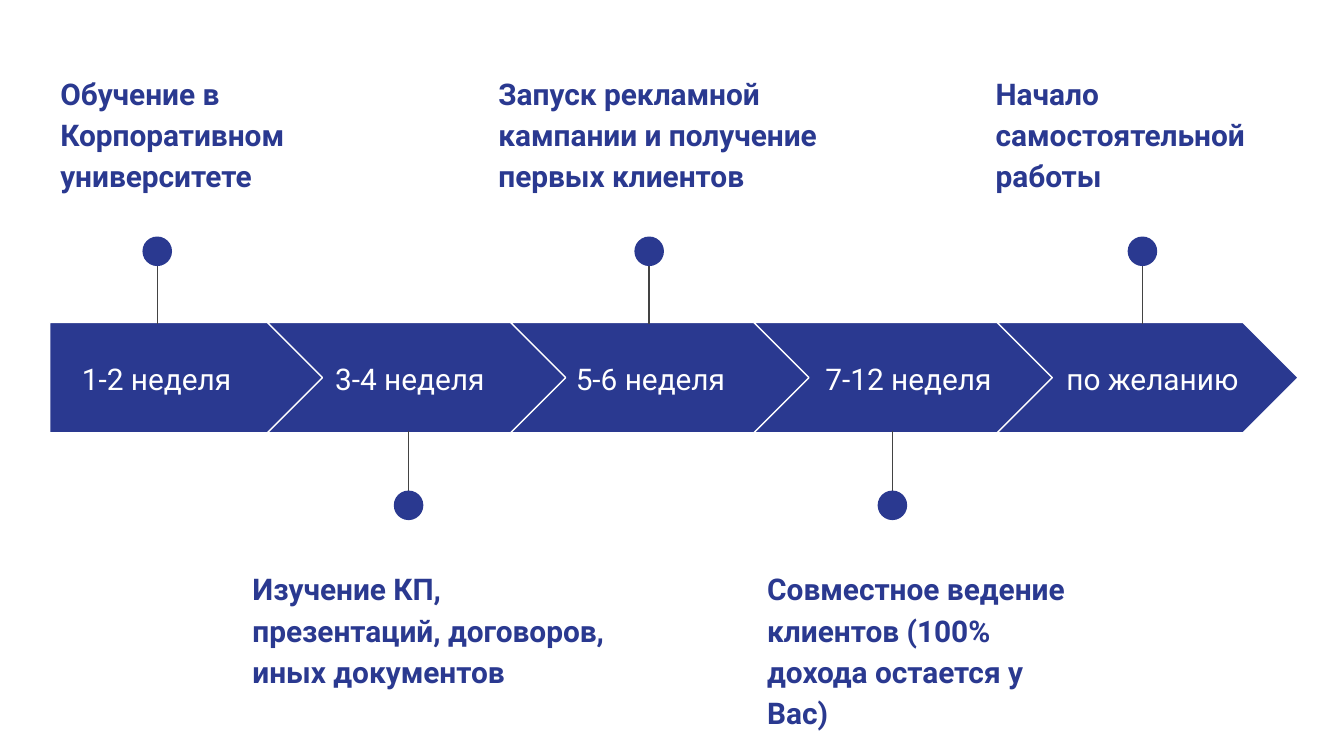
"""Build a five-stage timeline slide with chevrons, pins and captions."""
import pptx
import pptx.util
import pptx.dml.color
import pptx.enum.shapes
import pptx.enum.text
import pptx.oxml
from pptx.util import Inches

BLUE, WHITE, GREY = "2A3990", "FFFFFF", "434343"
SHAPE = pptx.enum.shapes.MSO_SHAPE
ANCHOR = pptx.enum.text.MSO_ANCHOR
ALIGN = pptx.enum.text.PP_ALIGN


def rgb(value):
    return pptx.dml.color.RGBColor.from_string(value)


def add_text(s, text, left, top, width, height, color):
    box = s.shapes.add_textbox(Inches(left), Inches(top), Inches(width), Inches(height))
    tf = box.text_frame
    tf.margin_left = tf.margin_right = tf.margin_top = tf.margin_bottom = Inches(0.1)
    tf.word_wrap = True
    p = tf.paragraphs[0]
    p.text = text
    p.font.size = pptx.util.Pt(16)
    p.font.name = "Roboto"
    p.font.color.rgb = rgb(color)
    return tf


prs = pptx.Presentation()
prs.slide_width = Inches(10)
prs.slide_height = Inches(10) * 9 // 16
s = prs.slides.add_slide(prs.slide_layouts[6])

stages = [
    ("1-2 неделя", 0.37, 1.59, 1.17,
     "Обучение в Корпоративном университете", 0.35, 2.45, 0.99),
    ("3-4 неделя", 2.33, 1.44, 3.04,
     "Изучение КП, презентаций, договоров, иных документов", 1.78, 2.95, 0.99),
    ("5-6 неделя", 4.12, 1.44, 4.83,
     "Запуск рекламной кампании и получение первых клиентов", 3.61, 2.85, 0.99),
    ("7-12 неделя", 6.04, 1.44, 6.64,
     "Совместное ведение клиентов (100% дохода остается у Вас)", 5.61, 2.45, 1.39),
    ("по желанию", 7.78, 1.59, 8.5,
     "Начало самостоятельной работы", 7.31, 2.45, 0.99),
]

for i, (week, week_x, week_w, pin_x, caption, cap_x, cap_w, cap_h) in enumerate(stages):
    above = i % 2 == 0
    kind, left, width = (SHAPE.CHEVRON, 0.18 + 1.81 * i, 2.24) if i else (SHAPE.PENTAGON, 0.37, 2.05)
    arrow = s.shapes.add_shape(kind, Inches(left), Inches(2.4), Inches(width), Inches(0.82))
    arrow.adjustments[0] = 0.5
    arrow.shadow.inherit = False
    arrow.fill.solid()
    arrow.fill.fore_color.rgb = rgb(BLUE)
    arrow.line.color.rgb = rgb(WHITE)
    arrow.line.width = pptx.util.Pt(0.75)

    tf = add_text(s, week, week_x, 2.56, week_w, 0.51, WHITE)
    tf.word_wrap = False
    tf.vertical_anchor = ANCHOR.MIDDLE
    tf.paragraphs[0].alignment = ALIGN.CENTER

    start, end, dot_y, cap_y = (1.8, 2.41, 1.76, 0.42) if above else (3.82, 3.21, 3.65, 4.11)
    stem = s.shapes.add_connector(pptx.enum.shapes.MSO_CONNECTOR.STRAIGHT,
                                  Inches(pin_x), Inches(start), Inches(pin_x), Inches(end))
    stem.line.color.rgb = rgb(GREY)
    stem.line.width = pptx.util.Pt(0.75)
    stem._element.spPr.append(pptx.oxml.parse_xml(
        '<a:effectLst xmlns:a="http://schemas.openxmlformats.org/drawingml/2006/main"/>'))

    dot = s.shapes.add_shape(SHAPE.OVAL, Inches(pin_x - 0.11), Inches(dot_y), Inches(0.22), Inches(0.22))
    dot.shadow.inherit = False
    dot.fill.solid()
    dot.fill.fore_color.rgb = rgb(BLUE)
    dot.line.fill.background()

    p = add_text(s, caption, cap_x, cap_y, cap_w, cap_h, BLUE).paragraphs[0]
    p.font.bold = True
    p.line_spacing = 1.15

prs.save("out.pptx")
